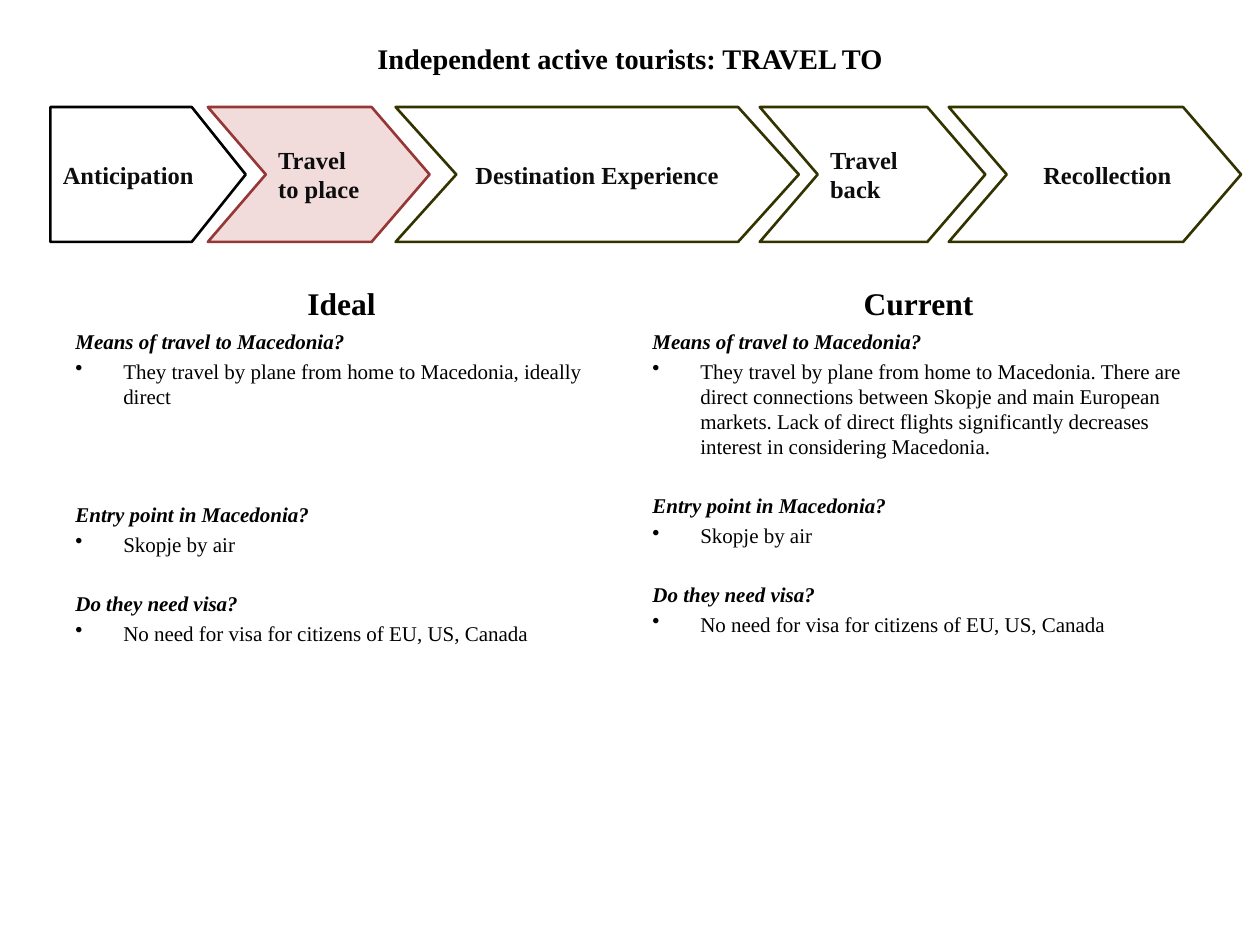
from lxml import etree
from pptx import Presentation
from pptx import util as u
from pptx.dml.color import RGBColor
from pptx.enum import shapes, text
from pptx.oxml import ns

BLACK = RGBColor(0x00, 0x00, 0x00)
INK = RGBColor(0x0D, 0x0D, 0x0D)
WHITE = RGBColor(0xFF, 0xFF, 0xFF)
PINK = RGBColor(0xF2, 0xDC, 0xDB)
RED = RGBColor(0x95, 0x37, 0x35)
OLIVE = RGBColor(0x33, 0x33, 0x00)

presentation = Presentation()
presentation.slide_width = u.Inches(10)
presentation.slide_height = u.Inches(7.5)
COLUMN = presentation.slide_width / 100
ROW = presentation.slide_height / 75
slide = presentation.slides.add_slide(presentation.slide_layouts[5])


def grid(left, top, width, height):
    """Turn columns and rows into slide lengths."""
    return [round(n) for n in (left * COLUMN, top * ROW, width * COLUMN, height * ROW)]


def write(paragraph, words, size, color=BLACK, bold=True, italic=False, align=text.PP_ALIGN.LEFT):
    paragraph.alignment = align
    run = paragraph.add_run()
    run.text = words
    run.font.color.rgb = color
    formats = {"name": "Times New Roman", "size": u.Pt(size), "bold": bold, "italic": italic}
    for name, value in formats.items():
        setattr(run.font, name, value)


# Title
title = slide.shapes.title
title.left, title.top, title.width, title.height = grid(5, 3, 90, 3.3)
title.text_frame.vertical_anchor = text.MSO_ANCHOR.MIDDLE
title.text_frame.auto_size = text.MSO_AUTO_SIZE.NONE
write(title.text_frame.paragraphs[0], "Independent active tourists: TRAVEL TO", 16.2,
      align=text.PP_ALIGN.CENTER)

# Columns: (question, answer, empty lines above the question)
ENTRY = ("Entry point in Macedonia?", "Skopje by air")
VISA = ("Do they need visa?", "No need for visa for citizens of EU, US, Canada", 1)
MEANS = "Means of travel to Macedonia?"
columns = [
    (5, "Ideal", [
        (MEANS, "They travel by plane from home to Macedonia, ideally direct", 0),
        (*ENTRY, 3), VISA]),
    (50.8, "Current", [
        (MEANS, "They travel by plane from home to Macedonia. There are direct connections "
         "between Skopje and main European markets. Lack of direct flights significantly "
         "decreases interest in considering Macedonia.", 0),
        (*ENTRY, 1), VISA]),
]
SPACE = 2.5
EMPTY_LINE = 16.9

for left, heading, questions in columns:
    heading_box = slide.shapes.add_textbox(*grid(left, 21, 44.2, 5))
    heading_box.text_frame.word_wrap = True
    heading_box.text_frame.vertical_anchor = text.MSO_ANCHOR.BOTTOM
    write(heading_box.text_frame.paragraphs[0], heading, 18, align=text.PP_ALIGN.CENTER)

    frame = slide.shapes.add_textbox(*grid(left, 25.6, 44.2, 47.6)).text_frame
    frame.word_wrap = True
    for number, (question, answer, empty_lines) in enumerate(questions):
        paragraph = frame.add_paragraph() if number else frame.paragraphs[0]
        if number:
            paragraph.space_before = u.Pt(SPACE + empty_lines * EMPTY_LINE)
        write(paragraph, question, 12, italic=True)

        paragraph = frame.add_paragraph()
        paragraph.space_before = u.Pt(SPACE)
        write(paragraph, answer, 12, bold=False)
        properties = paragraph._p.get_or_add_pPr()
        properties.set("marL", str(u.Inches(0.38)))
        properties.set("indent", str(-u.Inches(0.38)))
        etree.SubElement(properties, ns.qn("a:buChar")).set("char", "•")

# Journey stages: (label, left, width, point, fill, line, left margin, right margin, alignment)
LEFT, CENTER = text.PP_ALIGN.LEFT, text.PP_ALIGN.CENTER
stages = [
    ("Anticipation", 4, 15.5, 0.4, None, BLACK, 1, 1, LEFT),
    ("Travel to place", 16.5, 17.6, 0.43, PINK, RED, 1, 0.6, LEFT),
    ("Destination Experience", 31.4, 32, 0.45, WHITE, OLIVE, 1, 1, CENTER),
    ("Travel back", 60.3, 17.9, 0.43, WHITE, OLIVE, 1, 0.6, LEFT),
    ("Recollection", 75.3, 23.2, 0.43, WHITE, OLIVE, 2.9, 0.6, LEFT),
]
for label, left, width, point, fill, line, margin_left, margin_right, align in stages:
    kind = shapes.MSO_SHAPE.CHEVRON if fill else shapes.MSO_SHAPE.PENTAGON
    stage = slide.shapes.add_shape(kind, *grid(left, 8.5, width, 10.7))
    stage.adjustments[0] = point
    stage.shadow.inherit = False
    if fill:
        stage.fill.solid()
        stage.fill.fore_color.rgb = fill
    else:
        stage.fill.background()
    stage.line.color.rgb = line
    stage.line.width = u.Pt(1.5)
    frame = stage.text_frame
    formats = {"word_wrap": True, "vertical_anchor": text.MSO_ANCHOR.MIDDLE,
               "margin_left": round(margin_left * COLUMN),
               "margin_right": round(margin_right * COLUMN)}
    for name, value in formats.items():
        setattr(frame, name, value)
    write(frame.paragraphs[0], label, 14, INK, align=align)

presentation.save("out.pptx")
